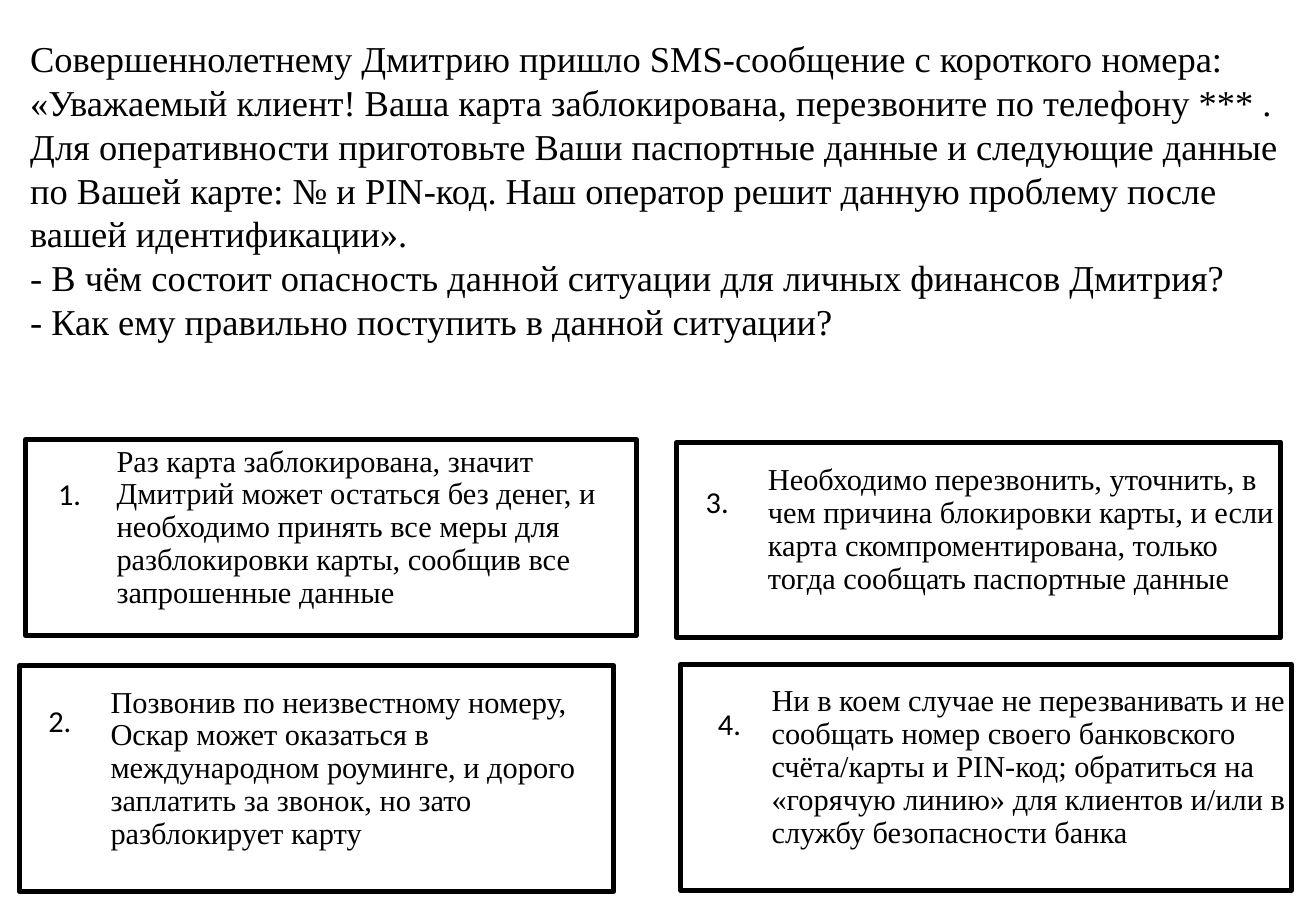
import pptx
import pptx.util
import pptx.dml.color
import pptx.enum.shapes
import pptx.enum.text

Inches = pptx.util.Inches
Pt = pptx.util.Pt
BLACK = pptx.dml.color.RGBColor(0, 0, 0)
WHITE = pptx.dml.color.RGBColor(255, 255, 255)
SERIF = "Times New Roman"
SANS = "Calibri"

SITUATION = [
    "Совершеннолетнему Дмитрию пришло SMS-сообщение с короткого номера: "
    "«Уважаемый клиент! Ваша карта заблокирована, перезвоните по телефону *** . "
    "Для оперативности приготовьте Ваши паспортные данные и следующие данные "
    "по Вашей карте: № и PIN-код. Наш оператор решит данную проблему после "
    "вашей идентификации».",
    "- В чём состоит опасность данной ситуации для личных финансов Дмитрия?",
    "- Как ему правильно поступить в данной ситуации?",
]

ANSWERS = [
    ("1.", (0.21, 3.62, 5.03, 1.61), (0.17, 0.24),
     "Раз карта заблокирована, значит Дмитрий может остаться без денег, и "
     "необходимо принять все меры для разблокировки карты, сообщив все "
     "запрошенные данные"),
    ("2.", (0.16, 5.48, 4.89, 1.86), (0.14, 0.25),
     "Позвонив по неизвестному номеру, Оскар может оказаться в международном "
     "роуминге, и дорого заплатить за звонок, но зато разблокирует карту"),
    ("3.", (5.57, 3.64, 4.97, 1.61), (0.14, 0.29),
     "Необходимо перезвонить, уточнить, в чем причина блокировки карты, и если "
     "карта скомпроментирована, только тогда сообщать паспортные данные"),
    ("4.", (5.6, 5.47, 5.03, 1.86), (0.21, 0.29),
     "Ни в коем случае не перезванивать и не сообщать номер своего банковского "
     "счёта/карты и PIN-код; обратиться на «горячую линию» для клиентов и/или "
     "в службу безопасности банка"),
]


def add_run(p, text, font, size):
    r = p.add_run()
    r.text = text
    r.font.name = font
    r.font.size = Pt(size)
    r.font.color.rgb = BLACK


def set_frame(tf, left, top, right, bottom):
    tf.word_wrap = True
    tf.vertical_anchor = pptx.enum.text.MSO_ANCHOR.MIDDLE
    tf.margin_left, tf.margin_top = Inches(left), Inches(top)
    tf.margin_right, tf.margin_bottom = Inches(right), Inches(bottom)


def add_situation(s, box):
    sp = s.shapes.add_textbox(*map(Inches, box))
    sp.fill.solid()
    sp.fill.fore_color.rgb = WHITE
    tf = sp.text_frame
    set_frame(tf, 0.1, 0.05, 0.1, 0.41)
    for i, text in enumerate(SITUATION):
        p = tf.paragraphs[0] if i == 0 else tf.add_paragraph()
        add_run(p, text, SERIF, 21.6)


def add_answer(s, box, number, offset, text):
    sp = s.shapes.add_shape(
        pptx.enum.shapes.MSO_SHAPE.RECTANGLE, *map(Inches, box))
    sp.shadow.inherit = False
    sp.fill.solid()
    sp.fill.fore_color.rgb = WHITE
    sp.line.color.rgb = BLACK
    sp.line.width = Pt(3)
    set_frame(sp.text_frame, 0.75, 0, 0, 0.16)
    p = sp.text_frame.paragraphs[0]
    p.alignment = pptx.enum.text.PP_ALIGN.LEFT
    p.line_spacing = 0.9
    add_run(p, text, SERIF, 18)

    label = s.shapes.add_textbox(
        Inches(box[0] + offset[0]), Inches(box[1] + offset[1]),
        Inches(0.5), Inches(0.4))
    label.text_frame.word_wrap = True
    add_run(label.text_frame.paragraphs[0], number, SANS, 18)


def main():
    prs = pptx.Presentation()
    prs.slide_width, prs.slide_height = Inches(10.83), Inches(7.5)
    s = prs.slides.add_slide(prs.slide_layouts[6])
    add_situation(s, (0.15, 0.19, 10.51, 3.1))
    for number, box, offset, text in ANSWERS:
        add_answer(s, box, number, offset, text)
    prs.save("out.pptx")


if __name__ == "__main__":
    main()
